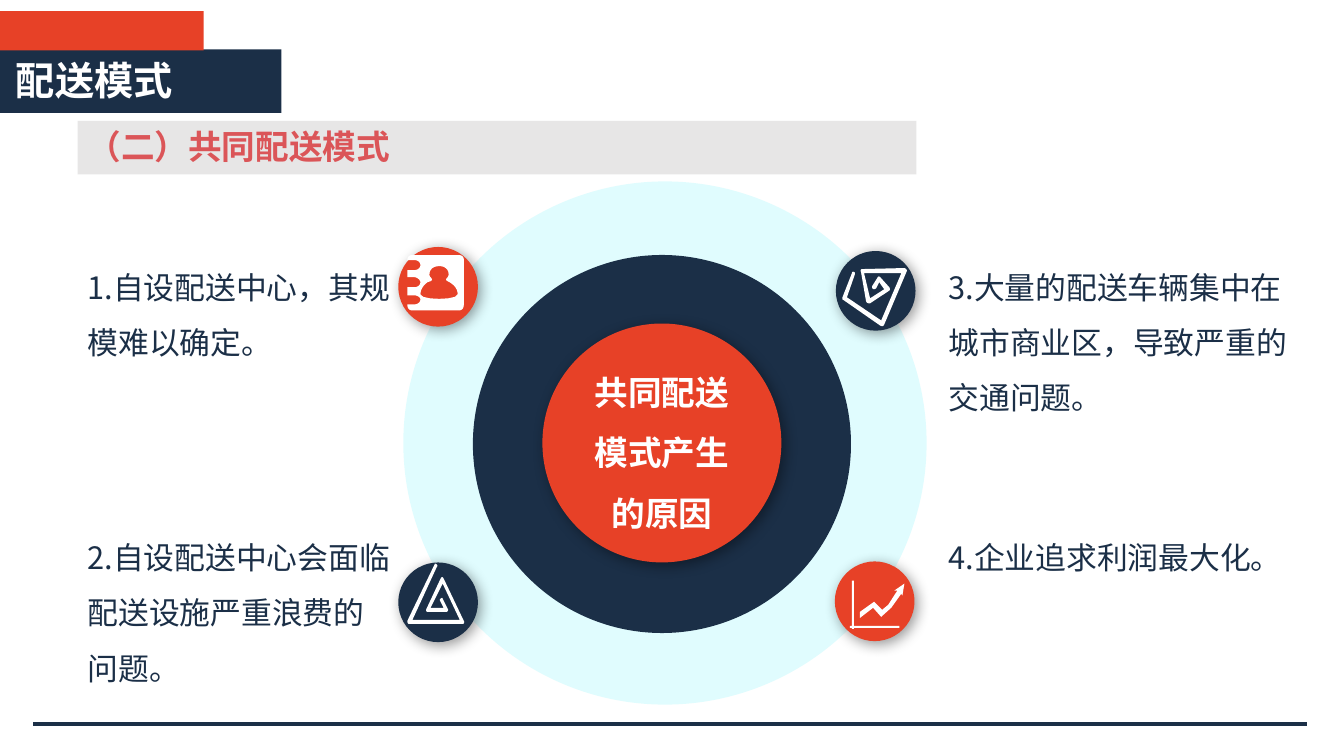
from dataclasses import dataclass

from lxml.etree import SubElement
from pptx import Presentation
from pptx.dml.color import RGBColor
from pptx.enum.shapes import MSO_CONNECTOR as Connector
from pptx.enum.shapes import MSO_SHAPE as Shape
from pptx.enum.text import MSO_ANCHOR as Anchor
from pptx.enum.text import MSO_AUTO_SIZE as AutoSize
from pptx.enum.text import PP_ALIGN as Align
from pptx.oxml.ns import qn
from pptx.util import Inches, Pt


@dataclass(frozen=True)
class Theme:
    font: str = "Noto Sans CJK SC"
    navy: str = "1B2F47"
    red: str = "E74127"
    rose: str = "DB5558"
    grey: str = "E7E6E6"
    cyan: str = "00ECFE"
    white: str = "FFFFFF"
    title_size: int = 28
    heading_size: int = 24
    body_size: int = 22


@dataclass(frozen=True)
class Block:
    kind: Shape
    left: float
    top: float
    width: float
    height: float
    color: str
    alpha: int = 100
    shadow: bool = False


@dataclass(frozen=True)
class Label:
    text: str
    left: float
    top: float
    width: float
    height: float
    size: int
    color: str
    bold: bool = False
    align: Align = Align.LEFT
    spacing: float = 1.0


THEME = Theme()
BADGE = 0.79

# A point is (x, y); six numbers are a cubic curve: two handles and an end
Point = tuple[float, ...]
Contour = list[Point]

TRIANGLE_SPIRAL: list[Contour] = [[
    (4.33, 5.63), (4.34, 5.62, 4.34, 5.6, 4.33, 5.6), (4.32, 5.59, 4.31, 5.59, 4.31, 5.6),
    (4.04, 6.16), (4.04, 6.17, 4.04, 6.19, 4.06, 6.19), (4.59, 6.19),
    (4.6, 6.19, 4.61, 6.17, 4.6, 6.16), (4.4, 5.74), (4.39, 5.72, 4.38, 5.72, 4.37, 5.74),
    (4.23, 6.04), (4.22, 6.06, 4.23, 6.07, 4.24, 6.07), (4.43, 6.07),
    (4.44, 6.07, 4.45, 6.05, 4.44, 6.04), (4.39, 5.94), (4.39, 5.93, 4.38, 5.93, 4.37, 5.94),
    (4.36, 5.94, 4.36, 5.96, 4.37, 5.97), (4.4, 6.03), (4.27, 6.03), (4.39, 5.79),
    (4.56, 6.15), (4.09, 6.15),
]]
DIAMOND_SPIRAL: list[Contour] = [[
    (8.48, 2.72), (8.48, 2.71, 8.48, 2.7, 8.47, 2.7), (8.46, 2.69, 8.45, 2.7, 8.45, 2.71),
    (8.36, 2.94), (8.35, 2.96, 8.35, 2.97, 8.37, 2.98), (8.73, 3.23),
    (8.75, 3.24, 8.76, 3.24, 8.77, 3.22), (8.99, 2.7), (9, 2.68, 8.99, 2.66, 8.96, 2.66),
    (8.55, 2.67), (8.54, 2.67, 8.53, 2.68, 8.54, 2.7), (8.59, 2.99),
    (8.6, 3.01, 8.61, 3.01, 8.63, 3.01), (8.81, 2.89), (8.83, 2.88, 8.83, 2.87, 8.82, 2.85),
    (8.73, 2.75), (8.72, 2.74, 8.71, 2.74, 8.7, 2.76), (8.65, 2.84),
    (8.65, 2.85, 8.65, 2.86, 8.66, 2.87), (8.67, 2.87, 8.68, 2.87, 8.69, 2.86),
    (8.72, 2.8), (8.77, 2.87), (8.63, 2.96), (8.57, 2.71), (8.94, 2.71), (8.74, 3.18),
    (8.4, 2.95),
]]
CONTACT_CARD: list[Contour] = [
    [
        (4.17, 2.63), (4.17, 2.66, 4.14, 2.68, 4.11, 2.68), (4.04, 2.68), (4.04, 2.75),
        (4.11, 2.75), (4.14, 2.75, 4.17, 2.78, 4.17, 2.8), (4.17, 2.83, 4.14, 2.85, 4.11, 2.85),
        (4.04, 2.85), (4.04, 2.93), (4.11, 2.93), (4.14, 2.93, 4.17, 2.95, 4.17, 2.97),
        (4.17, 3, 4.14, 3.02, 4.11, 3.02), (4.04, 3.02), (4.04, 3.06, 4.06, 3.08, 4.09, 3.08),
        (4.55, 3.08), (4.58, 3.08, 4.6, 3.06, 4.6, 3.03), (4.6, 2.57),
        (4.6, 2.55, 4.58, 2.53, 4.55, 2.53), (4.09, 2.53), (4.06, 2.53, 4.04, 2.55, 4.04, 2.58),
        (4.11, 2.58), (4.14, 2.58, 4.17, 2.6, 4.17, 2.63),
    ],
    [
        (4.24, 2.8), (4.27, 2.79), (4.29, 2.78, 4.29, 2.77, 4.27, 2.75),
        (4.26, 2.74, 4.26, 2.73, 4.26, 2.72), (4.26, 2.67, 4.3, 2.64, 4.36, 2.64),
        (4.41, 2.64, 4.45, 2.67, 4.45, 2.72), (4.45, 2.72, 4.45, 2.74, 4.44, 2.75),
        (4.42, 2.77, 4.42, 2.78, 4.44, 2.79), (4.46, 2.8), (4.51, 2.83, 4.54, 2.87, 4.54, 2.92),
        (4.54, 2.98, 4.17, 2.98, 4.17, 2.92), (4.17, 2.87, 4.2, 2.83, 4.24, 2.8),
    ],
]
TREND_ARROW: list[Contour] = [[
    (8.95, 5.91), (8.97, 5.79), (8.87, 5.86), (8.9, 5.86), (8.81, 6), (8.75, 6.05),
    (8.67, 5.97), (8.53, 6.07), (8.53, 6.13), (8.66, 6.03), (8.74, 6.12), (8.84, 6.03),
    (8.94, 5.89),
]]
CHART_AXES: list[Contour] = [[
    (8.47, 5.76), (8.45, 5.76), (8.45, 6.21), (8.43, 6.21), (8.43, 6.23), (8.45, 6.23),
    (8.45, 6.24), (8.47, 6.24), (8.47, 6.23), (8.92, 6.23), (8.92, 6.21), (8.47, 6.21),
]]
ICONS = [TRIANGLE_SPIRAL, DIAMOND_SPIRAL, CONTACT_CARD, TREND_ARROW, CHART_AXES]


def disc(left: float, top: float, size: float, color: str, **options) -> Block:
    return Block(Shape.OVAL, left, top, size, size, color, **options)


def reason(text: str, left: float, top: float, width: float, height: float) -> Label:
    return Label(text, left, top, width, height, THEME.body_size, THEME.navy, spacing=1.5)


BLOCKS = [
    # Title tabs and heading bar
    Block(Shape.RECTANGLE, 0, 0.49, 2.79, 0.63, THEME.navy),
    Block(Shape.RECTANGLE, 0, 0.11, 2.02, 0.39, THEME.red),
    Block(Shape.RECTANGLE, 0.77, 1.2, 8.32, 0.53, THEME.grey),
    # Rings
    disc(4, 1.8, 5.19, THEME.cyan, alpha=12),
    disc(4.69, 2.53, 3.75, THEME.navy),
    disc(5.38, 3.21, 2.37, THEME.red, shadow=True),
    # Badges
    disc(3.95, 5.58, BADGE, THEME.navy, shadow=True),
    disc(3.95, 2.45, BADGE, THEME.red, shadow=True),
    disc(8.28, 5.57, BADGE, THEME.red, shadow=True),
    disc(8.29, 2.49, BADGE, THEME.navy, shadow=True),
]
LABELS = [
    Label("配送模式", 0.06, 0.51, 2.81, 0.57, THEME.title_size, THEME.white, bold=True),
    Label("（二）共同配送模式", 0.77, 1.2, 8.32, 0.53, THEME.heading_size, THEME.rose, bold=True),
    Label("共同配送模式产生的原因", 5.78, 3.44, 1.57, 1.9, THEME.heading_size, THEME.white,
          bold=True, align=Align.CENTER, spacing=1.5),
    reason("1.自设配送中心，其规模难以确定。", 0.77, 2.43, 3.2, 1.2),
    reason("2.自设配送中心会面临配送设施严重浪费的问题。", 0.77, 5.11, 3.2, 1.75),
    reason("3.大量的配送车辆集中在城市商业区，导致严重的交通问题。", 9.31, 2.43, 3.67, 1.75),
    reason("4.企业追求利润最大化。", 9.31, 5.11, 3.67, 0.65),
]


def paint(shape, color: str) -> None:
    shape.shadow.inherit = False
    shape.fill.solid()
    shape.fill.fore_color.rgb = RGBColor.from_string(color)
    shape.line.fill.background()


def add_block(slide, block: Block) -> None:
    box = map(Inches, (block.left, block.top, block.width, block.height))
    shape = slide.shapes.add_shape(block.kind, *box)
    paint(shape, block.color)
    properties = shape._element.spPr
    if block.alpha < 100:
        color = properties.find(f"{qn('a:solidFill')}/{qn('a:srgbClr')}")
        SubElement(color, qn("a:alpha"), val=str(block.alpha * 1000))
    if block.shadow:
        shadow = SubElement(properties.find(qn("a:effectLst")), qn("a:outerShdw"),
                            blurRad=str(Pt(10)), dist=str(Pt(3)), dir=str(45 * 60000),
                            algn="tl", rotWithShape="0")
        color = SubElement(shadow, qn("a:srgbClr"), val="000000")
        SubElement(color, qn("a:alpha"), val="40000")


def flatten(contour: Contour, steps: int = 6) -> list[tuple[int, int]]:
    """Turn lines and curves into corner points in EMU."""
    points = [contour[0]]
    for segment in contour[1:]:
        if len(segment) == 2:
            points.append(segment)
            continue
        handles = [points[-1], segment[:2], segment[2:4], segment[4:]]
        for step in range(1, steps + 1):
            t = step / steps
            weights = ((1 - t) ** 3, 3 * t * (1 - t) ** 2, 3 * t * t * (1 - t), t ** 3)
            points.append(tuple(sum(w * h[axis] for w, h in zip(weights, handles))
                                for axis in (0, 1)))
    return [(Inches(x), Inches(y)) for x, y in points]


def add_icon(slide, contours: list[Contour]) -> None:
    first, *others = [flatten(contour) for contour in contours]
    builder = slide.shapes.build_freeform(*first[0])
    builder.add_line_segments(first[1:], close=True)
    for points in others:
        builder.move_to(*points[0])
        builder.add_line_segments(points[1:], close=True)
    paint(builder.convert_to_shape(), THEME.white)


def add_label(slide, label: Label) -> None:
    box = map(Inches, (label.left, label.top, label.width, label.height))
    frame = slide.shapes.add_textbox(*box).text_frame
    paragraph = frame.paragraphs[0]
    run = paragraph.add_run()
    run.text = label.text
    formats = {
        frame: {"word_wrap": True, "auto_size": AutoSize.SHAPE_TO_FIT_TEXT,
                "vertical_anchor": Anchor.TOP},
        paragraph: {"alignment": label.align, "line_spacing": label.spacing},
        run.font: {"name": THEME.font, "size": Pt(label.size), "bold": label.bold},
        run.font.color: {"rgb": RGBColor.from_string(label.color)},
    }
    for target, values in formats.items():
        for name, value in values.items():
            setattr(target, name, value)
    SubElement(run._r.get_or_add_rPr(), qn("a:ea"), typeface=THEME.font)


def add_footer_line(slide) -> None:
    ends = map(Inches, (12.96, 7.18, 0.33, 7.18))
    line = slide.shapes.add_connector(Connector.STRAIGHT, *ends)
    line.line.color.rgb = RGBColor.from_string(THEME.navy)
    line.line.width = Pt(3)
    SubElement(line._element.spPr, qn("a:effectLst"))


def main() -> None:
    presentation = Presentation()
    presentation.slide_width, presentation.slide_height = Inches(13.33), Inches(7.5)
    slide = presentation.slides.add_slide(presentation.slide_layouts[6])
    add_footer_line(slide)
    for draw, items in ((add_block, BLOCKS), (add_icon, ICONS), (add_label, LABELS)):
        for item in items:
            draw(slide, item)
    presentation.save("out.pptx")


if __name__ == "__main__":
    main()
